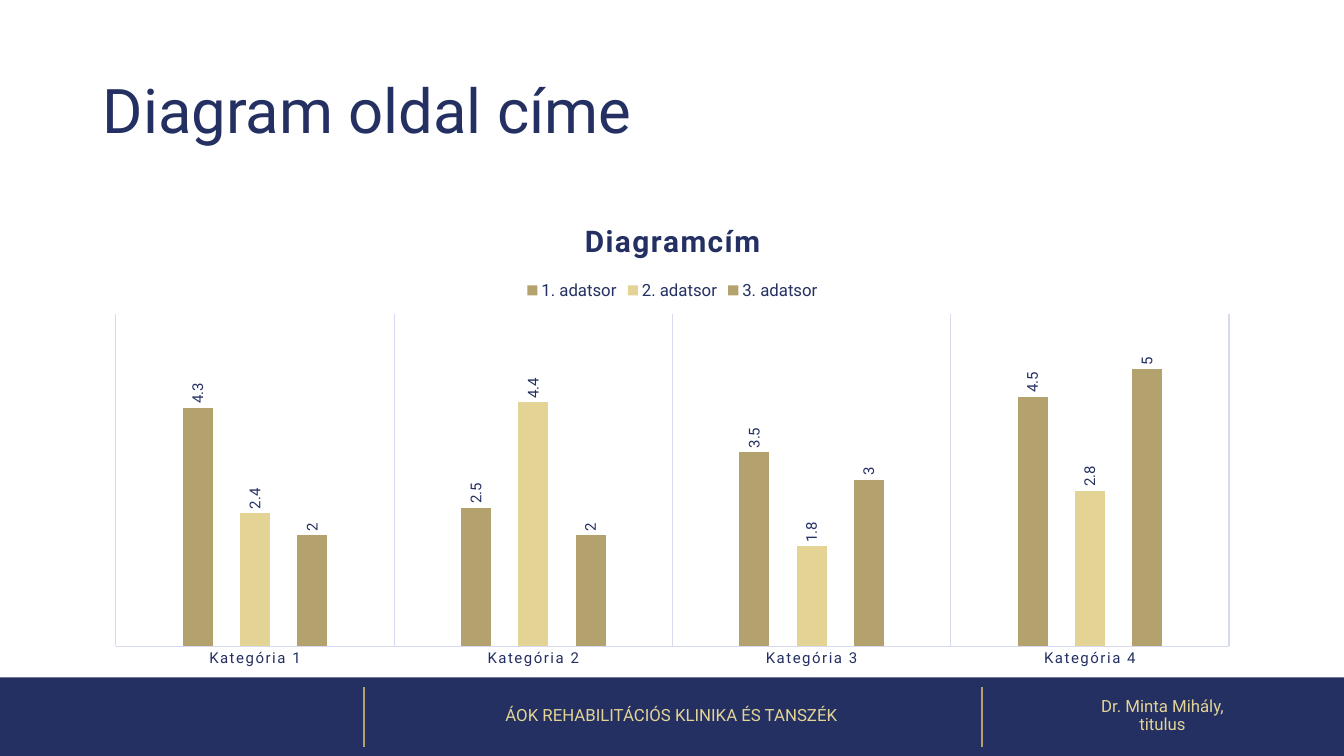
from typing import NamedTuple

from lxml.etree import SubElement
from pptx import Presentation
from pptx.chart.chart import Chart
from pptx.chart.data import CategoryChartData
from pptx.dml.color import RGBColor
from pptx.enum.chart import XL_CHART_TYPE, XL_LABEL_POSITION, XL_LEGEND_POSITION, XL_TICK_MARK
from pptx.enum.shapes import MSO_CONNECTOR, MSO_SHAPE
from pptx.enum.text import MSO_ANCHOR, PP_ALIGN
from pptx.oxml.ns import qn
from pptx.slide import Slide
from pptx.text.text import Font
from pptx.util import Inches, Pt

FONT = "Roboto"
NAVY, GOLD, SAND, PALE = "242F62", "B3A16E", "E3D496", "D6DAF0"
PAGE_WIDTH, PAGE_HEIGHT = 13.33, 7.5
FOOTER_TOP, FOOTER_HEIGHT = 6.71, 0.79
DIVIDERS = (3.61, 9.74)


class Label(NamedTuple):
    lines: tuple[str, ...]
    left: float
    top: float
    width: float
    height: float
    size: float
    color: str
    align: PP_ALIGN


class Series(NamedTuple):
    name: str
    values: tuple[float, ...]
    color: str


LABELS = (
    Label(("Diagram oldal címe",), 0.92, 0.4, 11.5, 1.45, 44, NAVY, PP_ALIGN.LEFT),
    Label(("ÁOK REHABILITÁCIÓS KLINIKA ÉS TANSZÉK",), 3.59, FOOTER_TOP, 6.14,
          FOOTER_HEIGHT, 12, SAND, PP_ALIGN.CENTER),
    Label(("Dr. Minta Mihály,", "titulus"), 9.73, FOOTER_TOP, 3.6,
          FOOTER_HEIGHT, 12, SAND, PP_ALIGN.CENTER),
)
CATEGORIES = [f"Kategória {number}" for number in range(1, 5)]
SERIES = (
    Series("1. adatsor", (4.3, 2.5, 3.5, 4.5), GOLD),
    Series("2. adatsor", (2.4, 4.4, 1.8, 2.8), SAND),
    Series("3. adatsor", (2, 2, 3, 5), GOLD),
)


def rgb(color: str) -> RGBColor:
    return RGBColor.from_string(color)


def style_font(font: Font, size: float, color: str, bold: bool = False) -> None:
    font.name, font.size, font.bold = FONT, Pt(size), bold
    font.color.rgb = rgb(color)


def add_label(page: Slide, label: Label) -> None:
    box = page.shapes.add_textbox(
        *map(Inches, (label.left, label.top, label.width, label.height)))
    frame = box.text_frame
    frame.word_wrap = True
    frame.vertical_anchor = MSO_ANCHOR.MIDDLE
    para = frame.paragraphs[0]
    para.alignment, para.line_spacing = label.align, 0.9
    for index, line in enumerate(label.lines):
        if index:
            para.add_line_break()
        span = para.add_run()
        span.text = line
        style_font(span.font, label.size, label.color)


def add_footer(page: Slide) -> None:
    band = page.shapes.add_shape(
        MSO_SHAPE.RECTANGLE, 0, Inches(FOOTER_TOP + 0.01), Inches(PAGE_WIDTH),
        Inches(FOOTER_HEIGHT))
    band.shadow.inherit = False
    band.fill.solid()
    band.fill.fore_color.rgb = rgb(NAVY)
    band.line.fill.background()
    for left in DIVIDERS:
        divider = page.shapes.add_connector(
            MSO_CONNECTOR.STRAIGHT, *map(Inches, (left, 6.82, left, 7.41)))
        divider.line.color.rgb = rgb(GOLD)
        divider.line.width = Pt(1.5)
        SubElement(divider.element.spPr, qn("a:effectLst"))


def style_axes(chart: Chart) -> None:
    axis = chart.category_axis
    axis.major_tick_mark = axis.minor_tick_mark = XL_TICK_MARK.NONE
    axis.has_major_gridlines = True
    for line in (axis.format.line, axis.major_gridlines.format.line):
        line.color.rgb = rgb(PALE)
        line.width = Pt(0.75)
    style_font(axis.tick_labels.font, 10.64, NAVY)
    values = chart.value_axis
    values.visible = values.has_major_gridlines = False
    values.minimum_scale, values.maximum_scale = 0, 6


def add_column_chart(page: Slide) -> None:
    chart_data = CategoryChartData()
    chart_data.categories = CATEGORIES
    for series in SERIES:
        chart_data.add_series(series.name, series.values)
    chart = page.shapes.add_chart(
        XL_CHART_TYPE.COLUMN_CLUSTERED, *map(Inches, (0.92, 2, 11.5, 4.71)),
        chart_data).chart
    style_font(chart.font, 10, NAVY)

    chart.has_title = True
    span = chart.chart_title.text_frame.paragraphs[0].add_run()
    span.text = "Diagramcím"
    style_font(span.font, 21.28, NAVY, bold=True)
    chart.has_legend = True
    chart.legend.position = XL_LEGEND_POSITION.TOP
    chart.legend.include_in_layout = False
    style_font(chart.legend.font, 12, NAVY)

    plot = chart.plots[0]
    plot.gap_width, plot.overlap, plot.vary_by_categories = 444, -90, False
    for columns, series in zip(plot.series, SERIES):
        columns.format.fill.solid()
        columns.format.fill.fore_color.rgb = rgb(series.color)
        labels = columns.data_labels
        labels.show_value = True
        labels.position = XL_LABEL_POSITION.OUTSIDE_END
        style_font(labels.font, 10.64, NAVY)
    style_axes(chart)

    for body in chart.element.xpath(".//c:dLbls/c:txPr/a:bodyPr"):
        body.set("rot", "-5400000")
        body.set("vert", "horz")
    for spaced in chart.element.xpath(".//c:title//a:rPr | .//c:catAx/c:txPr//a:defRPr"):
        spaced.set("spc", "120")


def main() -> None:
    deck = Presentation()
    deck.slide_width, deck.slide_height = Inches(PAGE_WIDTH), Inches(PAGE_HEIGHT)
    page = deck.slides.add_slide(deck.slide_layouts[6])
    add_footer(page)
    for label in LABELS:
        add_label(page, label)
    add_column_chart(page)
    deck.save("out.pptx")


if __name__ == "__main__":
    main()
